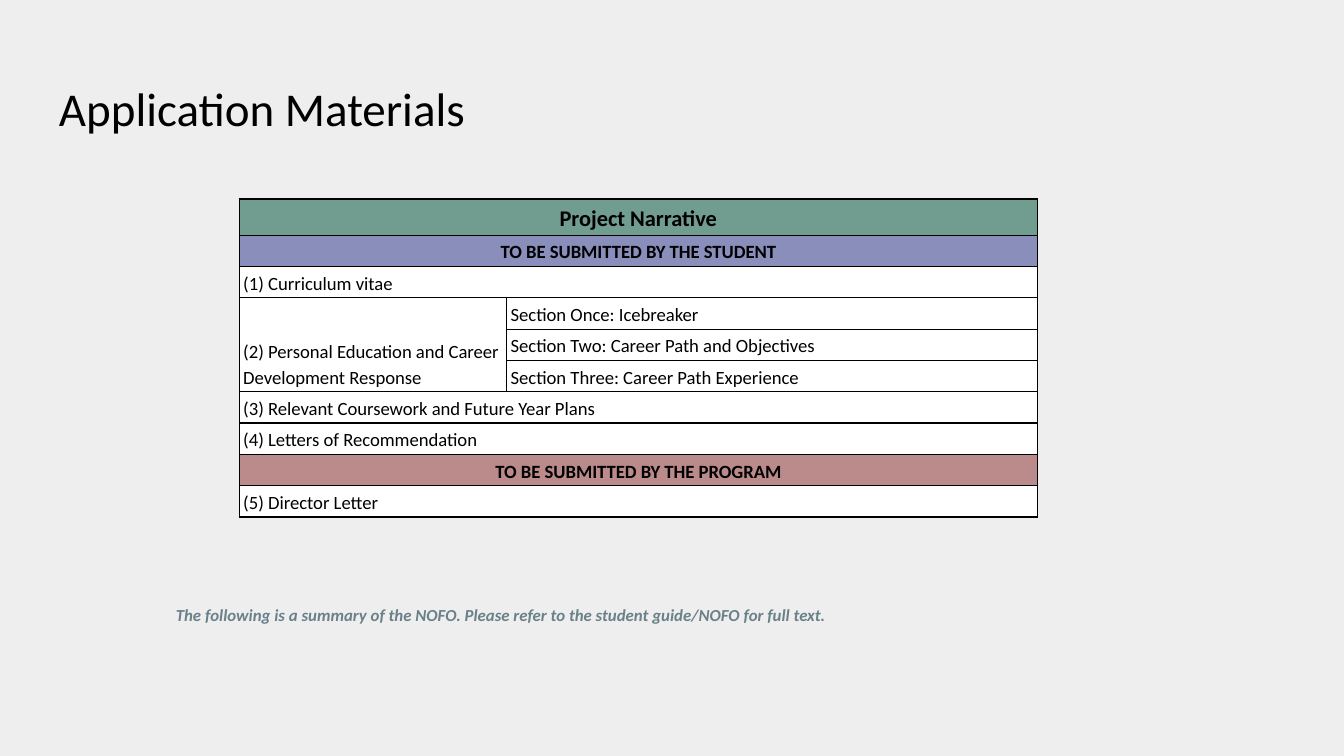
from lxml import etree
from pptx import Presentation
from pptx.dml.color import RGBColor
from pptx.enum.text import MSO_ANCHOR, PP_ALIGN
from pptx.oxml.ns import qn
from pptx.util import Inches, Pt

BOTTOM, MIDDLE = MSO_ANCHOR.BOTTOM, MSO_ANCHOR.MIDDLE
LEFT, CENTER = PP_ALIGN.LEFT, PP_ALIGN.CENTER

FONT = "Calibri"
COLORS = {
    "background": "EEEEEE",
    "text": "000000",
    "note": "6A818A",
    "title": "719C90",
    "student": "8A8EBB",
    "program": "BB8A8A",
    "item": "FFFFFF",
}

# Content
TITLE = "Application Materials"
NOTE = ("The following is a summary of the NOFO. "
        "Please refer to the student guide/NOFO for full text.")

# Each row: kind, then one text (full width) or two; None continues the cell above
ROWS = [
    ("title", "Project Narrative"),
    ("student", "TO BE SUBMITTED BY THE STUDENT"),
    ("item", "(1) Curriculum vitae"),
    ("item", "(2) Personal Education and Career Development Response",
     "Section Once: Icebreaker"),
    ("item", None, "Section Two: Career Path and Objectives"),
    ("item", None, "Section Three: Career Path Experience"),
    ("item", "(3) Relevant Coursework and Future Year Plans"),
    ("item", "(4) Letters of Recommendation"),
    ("program", "TO BE SUBMITTED BY THE PROGRAM"),
    ("item", "(5) Director Letter"),
]
COLUMN_WIDTHS = [Inches(1.99), Inches(3.95)]
TITLE_HEIGHT, ROW_HEIGHT = Inches(0.27), Inches(0.7 / 3)


def color(name):
    return RGBColor.from_string(COLORS[name])


def style(paragraph, size, color_name="text", bold=False, italic=False):
    font = paragraph.font
    font.name, font.size = FONT, Pt(size)
    font.bold, font.italic = bold, italic
    font.color.rgb = color(color_name)


def add_text(slide, text, box, **font):
    frame = slide.shapes.add_textbox(*map(Inches, box)).text_frame
    frame.word_wrap = True
    frame.vertical_anchor = MIDDLE
    frame.margin_left = frame.margin_right = Inches(0.1)
    frame.margin_top = frame.margin_bottom = Inches(0.1)
    frame.text = text
    style(frame.paragraphs[0], **font)


def format_cell(cell, kind):
    cell.margin_left = cell.margin_right = Inches(0.03)
    cell.margin_top = cell.margin_bottom = Inches(0.02)
    cell.vertical_anchor = BOTTOM
    # Borders come before the fill in the cell properties
    properties = cell._tc.get_or_add_tcPr()
    for side in ("a:lnL", "a:lnR", "a:lnT", "a:lnB"):
        line = etree.SubElement(properties, qn(side), w=str(Pt(0.75)))
        fill = etree.SubElement(line, qn("a:solidFill"))
        etree.SubElement(fill, qn("a:srgbClr"), val=COLORS["text"])
    cell.fill.solid()
    cell.fill.fore_color.rgb = color(kind)


def write_cell(cell, text, kind):
    cell.text = text
    paragraph = cell.text_frame.paragraphs[0]
    paragraph.line_spacing = 1.15
    paragraph.alignment = LEFT if kind == "item" else CENTER
    style(paragraph, 12 if kind == "title" else 10, bold=kind != "item")


# Widescreen slide, 16:9
presentation = Presentation()
presentation.slide_width = Inches(10)
presentation.slide_height = Inches(10 * 9 / 16)
slide = presentation.slides.add_slide(presentation.slide_layouts[6])
slide.background.fill.solid()
slide.background.fill.fore_color.rgb = color("background")

# Title and note
add_text(slide, TITLE, (0.34, 0.49, 9.32, 0.62), size=25.2)
add_text(slide, NOTE, (1.21, 4.4, 7.59, 0.35),
         size=9, color_name="note", bold=True, italic=True)

# Table of application materials
heights = [TITLE_HEIGHT if kind == "title" else ROW_HEIGHT for kind, *_ in ROWS]
table = slide.shapes.add_table(
    len(ROWS), len(COLUMN_WIDTHS), Inches(1.78), Inches(1.48),
    sum(COLUMN_WIDTHS), sum(heights)).table
for column, width in zip(table.columns, COLUMN_WIDTHS):
    column.width = width

for index, (kind, *texts) in enumerate(ROWS):
    table.rows[index].height = heights[index]
    for cell in table.rows[index].cells:
        format_cell(cell, kind)
        # Small type keeps empty merged cells from stretching the row
        style(cell.text_frame.paragraphs[0], 10)
    for column, text in enumerate(texts):
        if text is not None:
            write_cell(table.cell(index, column), text, kind)
    if len(texts) == 1:
        table.cell(index, 0).merge(table.cell(index, 1))

# The second item spans its sections
section_rows = [index for index, row in enumerate(ROWS) if len(row) == 3]
table.cell(section_rows[0], 0).merge(table.cell(section_rows[-1], 0))

presentation.save("out.pptx")
